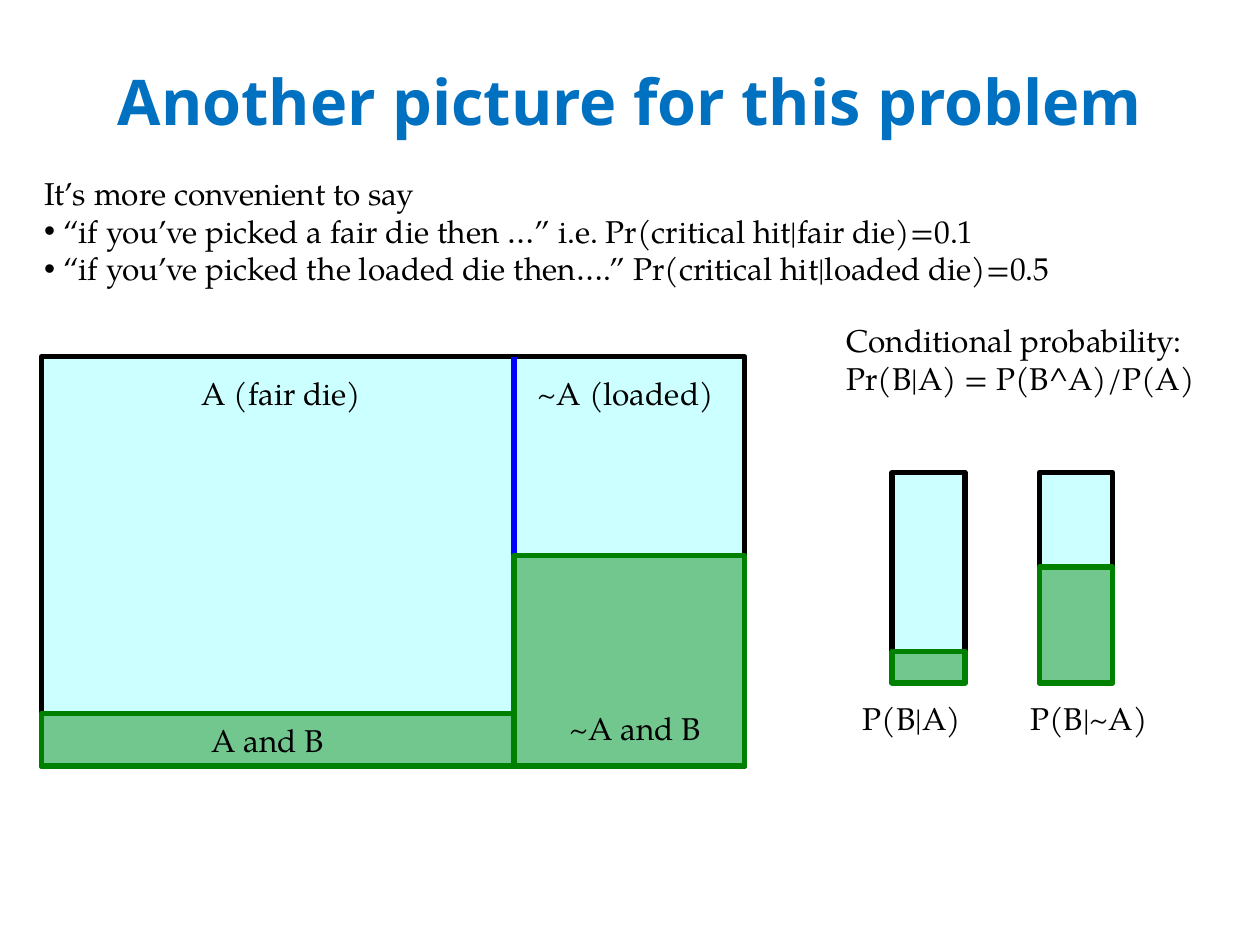
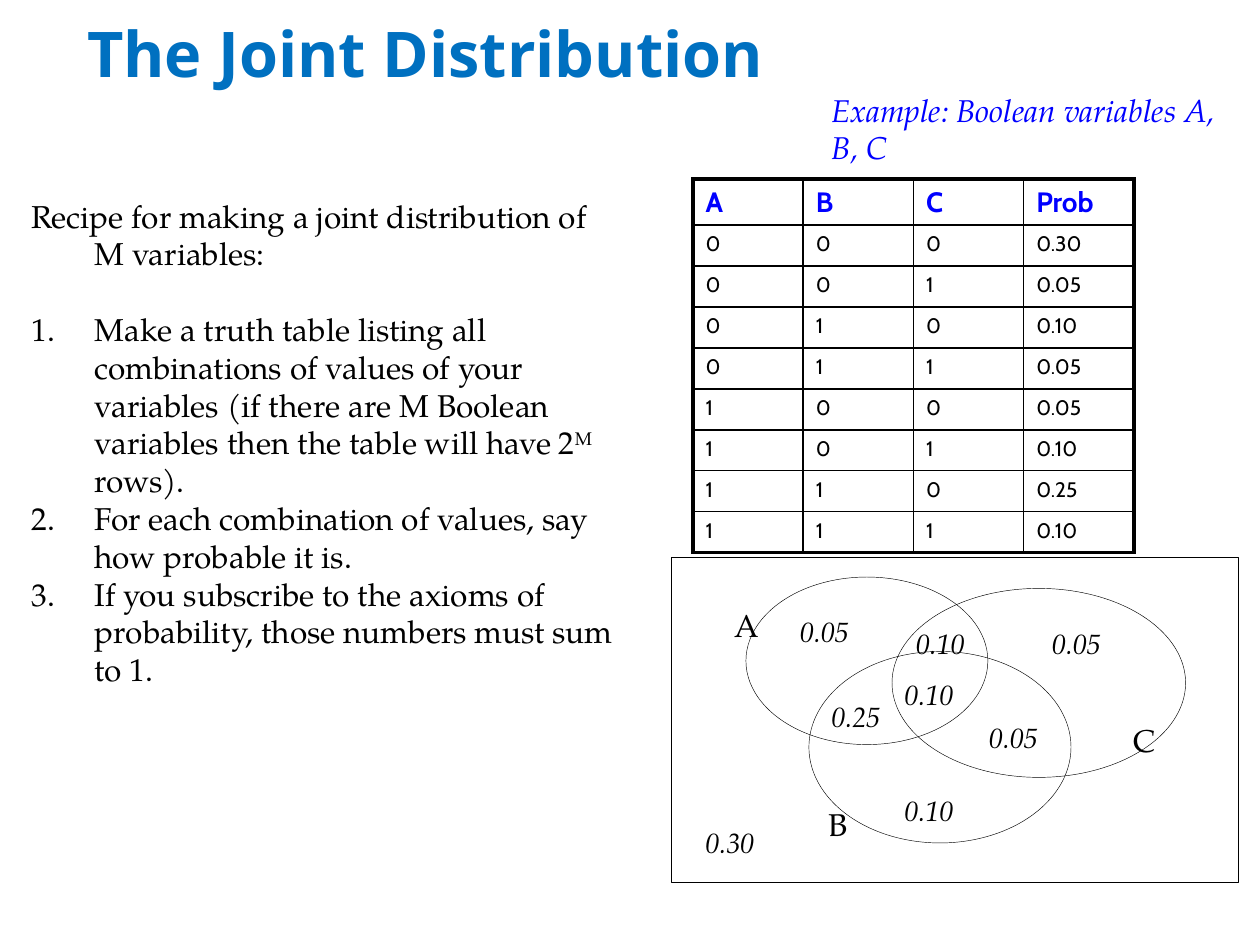
from itertools import product

from lxml.etree import SubElement
from pptx import Presentation
from pptx.dml.color import RGBColor
from pptx.enum.shapes import MSO_CONNECTOR, MSO_SHAPE
from pptx.enum.text import MSO_ANCHOR, MSO_AUTO_SIZE, PP_ALIGN
from pptx.oxml.ns import qn
from pptx.util import Inches, Pt

COLORS = {
    "title": "0070C0",
    "ink": "000000",
    "accent": "0000FF",
    "space": "CCFFFF",
    "event": "008000",
}
TITLE_FONT, BODY_FONT, TABLE_FONT = "Open Sans", "TeX Gyre Pagella", "Cabin"
LINE_HEIGHT = 21.6


def rgb(name):
    return RGBColor.from_string(COLORS[name])


def write(tf, paragraphs, font=BODY_FONT, size=18, color="ink", bold=False,
          italic=False, align=PP_ALIGN.LEFT):
    """Fill a text frame; a paragraph is a string or a list of (text, baseline)."""
    for i, runs in enumerate(paragraphs):
        p = tf.paragraphs[0] if i == 0 else tf.add_paragraph()
        p.alignment = align
        p.space_before = Pt(0)
        for text, baseline in [(runs, 0)] if isinstance(runs, str) else runs:
            r = p.add_run()
            r.text = text
            f = r.font
            f.name, f.size, f.bold, f.italic = font, Pt(size), bold, italic
            f.color.rgb = rgb(color)
            if baseline:
                f._element.set("baseline", str(baseline * 1000))


def set_bullet(p, tag, hanging, **attrs):
    """Give a paragraph its hanging indent in inches and its bullet element."""
    pPr = p._p.get_or_add_pPr()
    pPr.set("marL", str(Inches(hanging)))
    pPr.set("indent", str(-Inches(hanging)))
    SubElement(pPr, qn(tag), attrs)


def set_borders(cell, widths):
    """Draw cell borders; widths maps L, R, T and B to points."""
    tcPr = cell._tc.get_or_add_tcPr()
    for side, width in widths.items():
        ln = SubElement(tcPr, qn(f"a:ln{side}"), w=str(Pt(width)))
        fill = SubElement(ln, qn("a:solidFill"))
        SubElement(fill, qn("a:srgbClr"), val=COLORS["ink"])


class Deck:
    def __init__(self):
        self.prs = Presentation()
        self.prs.slide_width, self.prs.slide_height = Inches(10), Inches(7.5)
        self.s = None

    def placeholder(self, index, box):
        sp = self.s.placeholders[index]
        sp.left, sp.top, sp.width, sp.height = map(Inches, box)
        sp.text_frame.auto_size = MSO_AUTO_SIZE.NONE
        sp.text_frame.word_wrap = True
        return sp.text_frame

    def slide(self, title, box):
        self.s = self.prs.slides.add_slide(self.prs.slide_layouts[1])
        tf = self.placeholder(0, box)
        tf.vertical_anchor = MSO_ANCHOR.MIDDLE
        write(tf, [title], font=TITLE_FONT, size=36, color="title", bold=True,
              align=PP_ALIGN.CENTER)

    def body(self, box, intro, items, tag, hanging, **attrs):
        """Write an intro line and a list; return the paragraphs."""
        tf = self.placeholder(1, box)
        tf.vertical_anchor = MSO_ANCHOR.TOP
        write(tf, [intro] + items)
        first, *rest = tf.paragraphs
        set_bullet(first, "a:buNone", hanging)
        for p in rest:
            set_bullet(p, tag, hanging, **attrs)
        return tf.paragraphs

    def text(self, left, top, width, height, *lines, wrap=False, **fmt):
        sp = self.s.shapes.add_textbox(*map(Inches, (left, top, width, height)))
        tf = sp.text_frame
        tf.word_wrap = wrap
        tf.auto_size = MSO_AUTO_SIZE.SHAPE_TO_FIT_TEXT
        write(tf, lines, **fmt)

    def shape(self, box, kind=MSO_SHAPE.RECTANGLE, fill=None, line="ink",
              width=3, opacity=100):
        sp = self.s.shapes.add_shape(kind, *map(Inches, box))
        sp.shadow.inherit = False
        sp.line.color.rgb = rgb(line)
        sp.line.width = Pt(width)
        if fill is None:
            sp.fill.background()
            return
        sp.fill.solid()
        sp.fill.fore_color.rgb = rgb(fill)
        if opacity < 100:
            clr = sp._element.spPr.find(qn("a:solidFill"))[0]
            SubElement(clr, qn("a:alpha"), val=str(opacity * 1000))

    def sample_space(self, box):
        self.shape(box, fill="space")

    def event(self, left, bottom, width, height):
        """Shade the share of a sample space that stands on its bottom edge."""
        self.shape((left, bottom - height, width, height), fill="event",
                   line="event", opacity=44)

    def line(self, x1, y1, x2, y2):
        c = self.s.shapes.add_connector(MSO_CONNECTOR.STRAIGHT,
                                        *map(Inches, (x1, y1, x2, y2)))
        c.line.color.rgb = rgb("accent")
        c.line.width = Pt(3)
        SubElement(c._element.spPr, qn("a:effectLst"))

    def table(self, left, top, col_width, head_height, row_height, rows):
        n, m = len(rows), len(rows[0])
        height = head_height + (n - 1) * row_height
        table = self.s.shapes.add_table(
            n, m, *map(Inches, (left, top, m * col_width, height))).table
        table.first_row = table.horz_banding = False
        for col in table.columns:
            col.width = Inches(col_width)
        for i, row in enumerate(rows):
            head = i == 0
            table.rows[i].height = Inches(head_height if head else row_height)
            for j, value in enumerate(row):
                cell = table.cell(i, j)
                outer = {"L": j == 0, "R": j == m - 1,
                         "T": head, "B": i == n - 1}
                set_borders(cell, {k: 2.25 if v else 1 for k, v in outer.items()})
                cell.fill.background()
                write(cell.text_frame, [value], font=TABLE_FONT, bold=head,
                      size=16 if head else 12, color="accent" if head else "ink")


def conditional_slide(deck):
    deck.slide("Another picture for this problem", (0.5, 0.3, 9, 0.99))
    deck.body((0.25, 1.33, 9.31, 1.1), "It’s more convenient to say", [
        "“if you’ve picked a fair die then …” i.e. Pr(critical hit|fair die)=0.1",
        "“if you’ve picked the loaded die then….” Pr(critical hit|loaded die)=0.5",
    ], "a:buChar", 0.15, char="•")

    left, top, width, height = 0.33, 2.83, 5.58, 3.25
    split, bottom = 4.08, top + height
    deck.sample_space((left, top, width, height))
    deck.line(split, top, split, bottom)
    deck.event(left, bottom, split - left, 0.42)
    deck.event(split, bottom, left + width - split, 1.67)
    for x, y, w, label in [(1.5, 2.92, 1.52, "A (fair die)"),
                           (4.17, 2.92, 1.68, "~A (loaded)"),
                           (1.58, 5.67, 1.16, "A and B"),
                           (4.42, 5.58, 1.36, "~A and B")]:
        deck.text(x, y, w, 0.43, label)

    deck.text(6.62, 2.5, 3.03, 0.77, "Conditional probability:",
              "Pr(B|A) = P(B^A)/P(A)")
    bar_top, bar_width, bar_height = 3.75, 0.58, 1.67
    for x, share, label_x, label_width, label in [
            (7.08, 0.25, 6.75, 1, "P(B|A)"),
            (8.25, 0.92, 8.08, 1.2, "P(B|~A)")]:
        deck.sample_space((x, bar_top, bar_width, bar_height))
        deck.event(x, bar_top + bar_height, bar_width, share)
        deck.text(label_x, 5.5, label_width, 0.43, label)


def joint_slide(deck):
    deck.slide("The Joint Distribution", (0.25, 0, 6.25, 0.83))
    paragraphs = deck.body(
        (0.15, 1.51, 4.85, 4.77),
        "Recipe for making a joint distribution of M variables:", [
            [("Make a truth table listing all combinations of values of your "
              "variables (if there are M Boolean variables then the table "
              "will have 2", 0), ("M ", 30), ("rows).", 0)],
            "For each combination of values, say how probable it is.",
            "If you subscribe to the axioms of probability, those numbers "
            "must sum to 1.",
        ], "a:buAutoNum", 0.5, type="arabicPeriod")
    paragraphs[1].space_before = Pt(LINE_HEIGHT)

    deck.text(6.5, 0.67, 3.33, 0.77, "Example: Boolean variables A, B, C",
              wrap=True, color="accent", italic=True)
    probs = ["0.30", "0.05", "0.10", "0.05", "0.05", "0.10", "0.25", "0.10"]
    truth = [[*bits, prob] for bits, prob in zip(product("01", repeat=3), probs)]
    deck.table(5.5, 1.42, 0.875, 0.36, 0.325, [["A", "B", "C", "Prob"]] + truth)

    deck.shape((5.33, 4.42, 4.5, 2.58), width=0.25)
    for circle, x, y, name in [
            ((5.92, 4.58, 1.92, 1.33), 5.73, 4.76, "A"),
            ((6.42, 5.17, 2.08, 1.52), 6.48, 6.34, "B"),
            ((7.08, 4.67, 2.33, 1.5), 8.9, 5.67, "C")]:
        deck.shape(circle, MSO_SHAPE.OVAL, width=0.25)
        deck.text(x, y, 0.37, 0.43, name)
    for x, y, prob in [(7.75, 5.67, "0.05"), (6.5, 5.5, "0.25"),
                       (7.17, 4.92, "0.10"), (8.25, 4.92, "0.05"),
                       (6.25, 4.83, "0.05"), (7.08, 5.33, "0.10"),
                       (7.08, 6.25, "0.10"), (5.5, 6.5, "0.30")]:
        deck.text(x, y, 0.63, 0.37, prob, size=16, italic=True)


def main():
    deck = Deck()
    conditional_slide(deck)
    joint_slide(deck)
    deck.prs.save("out.pptx")


if __name__ == "__main__":
    main()
